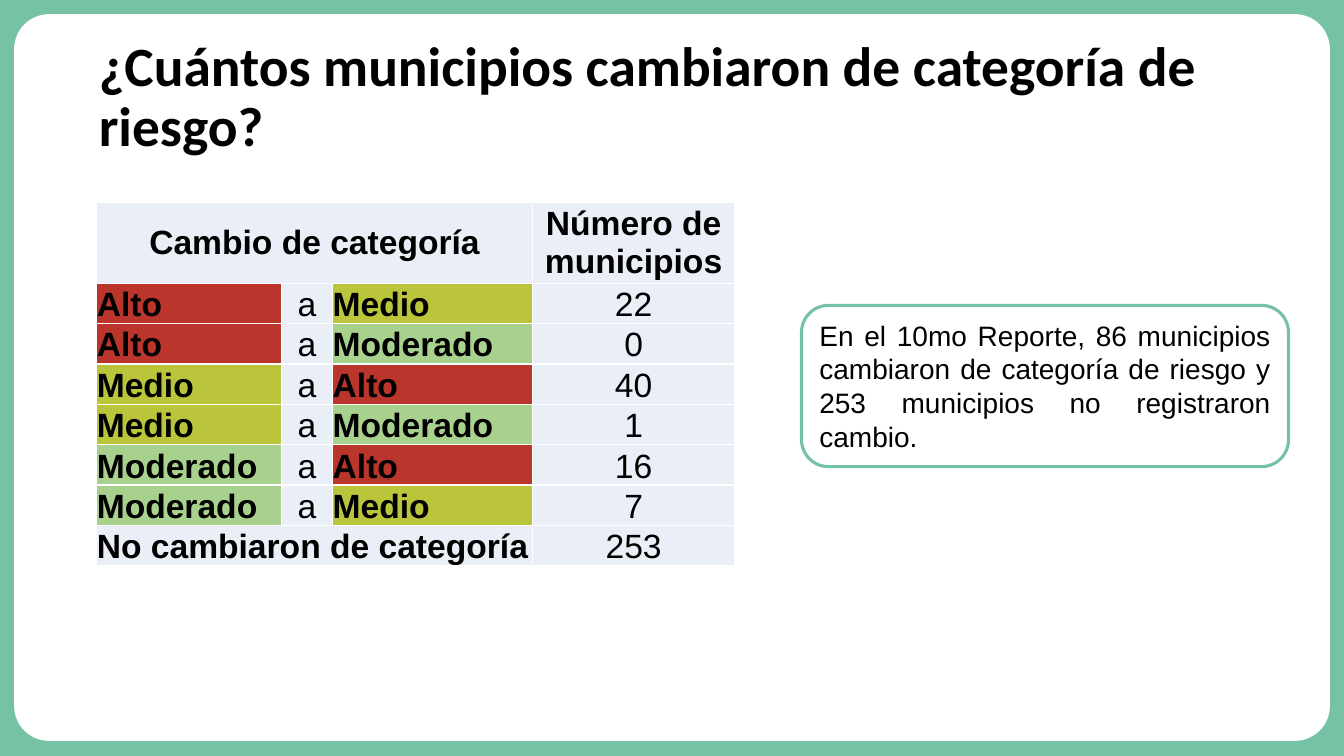
from lxml import etree
from pptx import Presentation
from pptx.dml.color import RGBColor
from pptx.enum.shapes import MSO_SHAPE
from pptx.enum.text import MSO_ANCHOR, MSO_AUTO_SIZE, PP_ALIGN
from pptx.oxml.ns import qn
from pptx.util import Inches, Pt

ROUND_RECT = MSO_SHAPE.ROUNDED_RECTANGLE
TOP, MIDDLE, BOTTOM = MSO_ANCHOR.TOP, MSO_ANCHOR.MIDDLE, MSO_ANCHOR.BOTTOM
LEFT, CENTER, JUSTIFY = PP_ALIGN.LEFT, PP_ALIGN.CENTER, PP_ALIGN.JUSTIFY
GROW = MSO_AUTO_SIZE.SHAPE_TO_FIT_TEXT
NO_FIT = MSO_AUTO_SIZE.NONE

GREEN = RGBColor(0x76, 0xC2, 0xA5)
WHITE = RGBColor(0xFF, 0xFF, 0xFF)
BLACK = RGBColor(0x00, 0x00, 0x00)
PALE = RGBColor(0xEA, 0xEF, 0xF7)
RISK_COLORS = {
    "Alto": RGBColor(0xBA, 0x36, 0x2C),
    "Medio": RGBColor(0xBB, 0xC5, 0x3B),
    "Moderado": RGBColor(0xA9, 0xD1, 0x8E),
}

TITLE_FONT = {"name": "Calibri", "size": Pt(39.6), "bold": True}
NOTE_FONT = {"name": "Arial", "size": Pt(20), "bold": False}
CELL_FONT = {"name": "Arial", "size": Pt(24), "bold": False}
BOLD_FONT = {**CELL_FONT, "bold": True}
NO_MARGINS = {f"margin_{side}": 0 for side in ("left", "right", "top", "bottom")}

COL_WIDTHS = (1.83, 0.51, 1.98, 2.01)
HEADER_HEIGHT, ROW_HEIGHT = 0.79, 0.4
CHANGES = (
    ("Alto", "Medio", 22),
    ("Alto", "Moderado", 0),
    ("Medio", "Alto", 40),
    ("Medio", "Moderado", 1),
    ("Moderado", "Alto", 16),
    ("Moderado", "Medio", 7),
)


def set_attributes(target, values):
    """Set every attribute in a dict of format values."""
    for name, value in values.items():
        setattr(target, name, value)


def write_text(tf, text, font, align):
    """Write one formatted paragraph into a text frame."""
    p = tf.paragraphs[0]
    p.alignment = align
    r = p.add_run()
    r.text = text
    set_attributes(r.font, font)
    r.font.color.rgb = BLACK
    return p


def add_round_rect(s, box, radius):
    """Add a rounded rectangle without fill or shadow."""
    sp = s.shapes.add_shape(ROUND_RECT, *map(Inches, box))
    sp.adjustments[0] = radius
    sp.shadow.inherit = False
    sp.fill.background()
    return sp


def add_panel(s):
    """Add the white panel over the green background."""
    s.background.fill.solid()
    s.background.fill.fore_color.rgb = GREEN
    sp = add_round_rect(s, (0.14, 0.14, 13.05, 7.21), 0.048)
    sp.fill.solid()
    sp.fill.fore_color.rgb = WHITE
    sp.line.fill.background()


def add_title(s, text):
    """Place and format the title, in front of the panel."""
    sp = s.shapes.title
    s.shapes._spTree.append(sp._element)
    set_attributes(sp, {"left": Inches(0.88), "top": Inches(0.33),
                        "width": Inches(11.5), "height": Inches(1.29)})
    set_attributes(sp.text_frame, {"word_wrap": True, "auto_size": NO_FIT,
                                   "vertical_anchor": MIDDLE})
    write_text(sp.text_frame, text, TITLE_FONT, LEFT).line_spacing = 0.9


def add_note(s, text):
    """Add the outlined note beside the table."""
    sp = add_round_rect(s, (7.95, 3.03, 4.83, 1.6), 0.167)
    sp.line.color.rgb = GREEN
    sp.line.width = Pt(2.25)
    set_attributes(sp.text_frame, {"word_wrap": True, "auto_size": GROW,
                                   "vertical_anchor": TOP})
    write_text(sp.text_frame, text, NOTE_FONT, JUSTIFY)


def set_borders(cell):
    """Draw thin white borders around a cell."""
    tc_pr = cell._tc.get_or_add_tcPr()
    for i, tag in enumerate(("a:lnL", "a:lnR", "a:lnT", "a:lnB")):
        ln = etree.Element(qn(tag), w=str(Pt(1)))
        fill = etree.SubElement(ln, qn("a:solidFill"))
        etree.SubElement(fill, qn("a:srgbClr"), val=str(WHITE))
        tc_pr.insert(i, ln)


def fill_cell(cell, text, font, align, anchor=BOTTOM):
    """Write a cell and colour it by its risk category."""
    set_attributes(cell, {**NO_MARGINS, "vertical_anchor": anchor})
    write_text(cell.text_frame, text, font, align)
    cell.fill.fore_color.rgb = RISK_COLORS.get(text, PALE)


def add_change_table(s):
    """Add the table of category changes."""
    last = len(CHANGES) + 1
    height = HEADER_HEIGHT + last * ROW_HEIGHT
    table = s.shapes.add_table(last + 1, len(COL_WIDTHS), Inches(0.96), Inches(2.01),
                               Inches(sum(COL_WIDTHS)), Inches(height)).table
    for col, width in zip(table.columns, COL_WIDTHS):
        col.width = Inches(width)
    for i, row in enumerate(table.rows):
        row.height = Inches(ROW_HEIGHT if i else HEADER_HEIGHT)
    for cell in table.iter_cells():
        cell.fill.solid()
        cell.fill.fore_color.rgb = PALE
        set_borders(cell)
    for i in (0, last):
        table.cell(i, 0).merge(table.cell(i, 2))
    fill_cell(table.cell(0, 0), "Cambio de categoría", BOLD_FONT, CENTER, MIDDLE)
    fill_cell(table.cell(0, 3), "Número de municipios", BOLD_FONT, CENTER, MIDDLE)
    for i, (before, after, count) in enumerate(CHANGES, 1):
        fill_cell(table.cell(i, 0), before, BOLD_FONT, LEFT)
        fill_cell(table.cell(i, 1), "a", CELL_FONT, CENTER)
        fill_cell(table.cell(i, 2), after, BOLD_FONT, LEFT)
        fill_cell(table.cell(i, 3), str(count), CELL_FONT, CENTER)
    fill_cell(table.cell(last, 0), "No cambiaron de categoría", BOLD_FONT, LEFT)
    fill_cell(table.cell(last, 3), "253", CELL_FONT, CENTER)


def main():
    """Build the slide and save it."""
    prs = Presentation()
    prs.slide_width, prs.slide_height = Inches(13.33), Inches(7.5)
    s = prs.slides.add_slide(prs.slide_layouts[5])
    add_panel(s)
    add_title(s, "¿Cuántos municipios cambiaron de categoría de riesgo?")
    add_note(s, "En el 10mo Reporte, 86 municipios cambiaron de categoría de riesgo "
                "y 253 municipios no registraron cambio.")
    add_change_table(s)
    prs.save("out.pptx")


if __name__ == "__main__":
    main()
